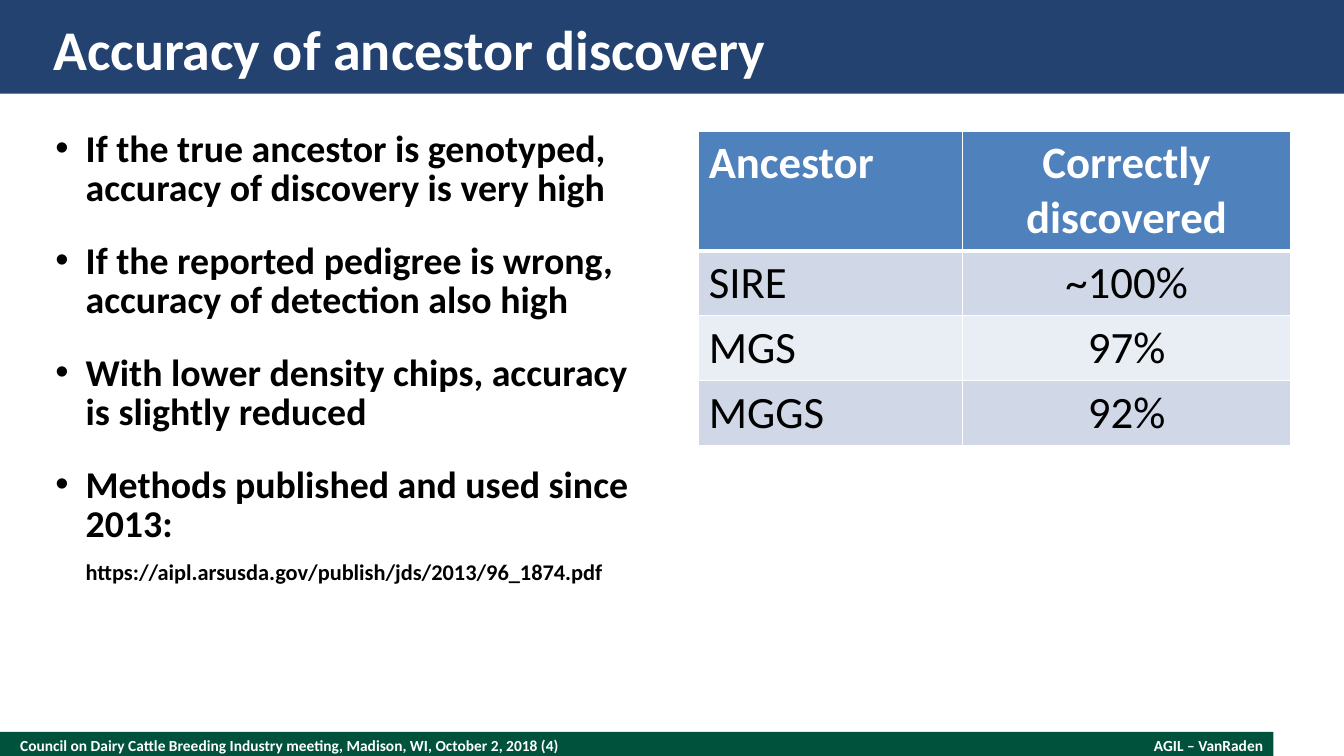
from lxml.etree import SubElement
from pptx import Presentation
from pptx.dml.color import RGBColor
from pptx.enum.shapes import MSO_SHAPE
from pptx.enum.text import MSO_ANCHOR as ANCHOR, MSO_AUTO_SIZE as AUTOSIZE, PP_ALIGN as ALIGN
from pptx.oxml import parse_xml
from pptx.oxml.ns import nsdecls, qn
from pptx.util import Inches, Pt

COLORS = {
    "navy": "244270", "green": "00523C", "white": "FFFFFF", "black": "000000",
    "header": "4F81BD", "band": "D0D8E8", "light band": "E9EDF4",
}


def color(name):
    return RGBColor.from_string(COLORS[name])


def write(paragraph, text, size, ink="white", bold=True, align=ALIGN.LEFT):
    """Append a formatted run to a paragraph."""
    paragraph.alignment = align
    run = paragraph.add_run()
    run.text = text
    run.font.name = "Calibri"
    run.font.size = Pt(size)
    run.font.bold = bold
    run.font.color.rgb = color(ink)


prs = Presentation()
prs.slide_width, prs.slide_height = Inches(13.33), Inches(7.5)
slide = prs.slides.add_slide(prs.slide_layouts[1])
title, body = slide.placeholders

# Bands behind the title and the footer
for top, width, height, fill in [(7.26, 12.63, 0.27, "green"), (0, 13.33, 0.93, "navy")]:
    band = slide.shapes.add_shape(
        MSO_SHAPE.RECTANGLE, 0, Inches(top), Inches(width), Inches(height))
    band.shadow.inherit = False
    band.fill.solid()
    band.fill.fore_color.rgb = color(fill)
    band.line.fill.background()
    title.element.addprevious(band.element)

# Footer, title and body frames
meeting = slide.shapes.add_textbox(0, 0, 0, 0)
author = slide.shapes.add_textbox(0, 0, 0, 0)
for frame, bounds, anchor in [
    (meeting, (0.2, 7.26, 8.67, 0.27), ANCHOR.MIDDLE),
    (author, (9.6, 7.3, 2.93, 0.19), ANCHOR.MIDDLE),
    (title, (0.53, 0.13, 12.27, 0.7), ANCHOR.MIDDLE),
    (body, (0.55, 1.3, 5.87, 5.6), ANCHOR.TOP),
]:
    frame.left, frame.top, frame.width, frame.height = map(Inches, bounds)
    text = frame.text_frame
    text.margin_left = text.margin_top = text.margin_right = text.margin_bottom = 0
    text.word_wrap = True
    text.auto_size = AUTOSIZE.NONE
    text.vertical_anchor = anchor

write(meeting.text_frame.paragraphs[0],
      "Council on Dairy Cattle Breeding Industry meeting, Madison, WI, October 2, 2018 (4)",
      size=11)
write(author.text_frame.paragraphs[0], "AGIL – VanRaden", size=11, align=ALIGN.RIGHT)
write(title.text_frame.paragraphs[0], "Accuracy of ancestor discovery", size=40)

# Findings
findings = [
    "If the true ancestor is genotyped, accuracy of discovery is very high",
    "If the reported pedigree is wrong, accuracy of detection also high",
    "With lower density chips, accuracy is slightly reduced",
    "Methods published and used since 2013: ",
]
for i, finding in enumerate(findings):
    point = body.text_frame.add_paragraph() if i else body.text_frame.paragraphs[0]
    props = point._p.get_or_add_pPr()
    props.set("marL", str(Inches(0.3)))
    props.set("indent", str(-Inches(0.3)))
    SubElement(props, qn("a:buChar")).set("char", "•")
    point.line_spacing = Pt(28)
    point.space_before = Pt(0)
    point.space_after = Pt(24)
    write(point, finding, size=27, ink="black")
write(point, "https://aipl.arsusda.gov/publish/jds/2013/96_1874.pdf", size=16, ink="black")

# Discovery rates
rates = [("Ancestor", "Correctly discovered"),
         ("SIRE", "~100%"), ("MGS", "97%"), ("MGGS", "92%")]
table = slide.shapes.add_table(
    len(rates), 2, Inches(6.93), Inches(1.3), Inches(5.87), Inches(3.07)).table
table.columns[0].width, table.columns[1].width = Inches(2.62), Inches(3.25)
for r, rate in enumerate(rates):
    is_header = r == 0
    table.rows[r].height = Inches(1.17 if is_header else 0.64)
    fill = "header" if is_header else "band" if r % 2 else "light band"
    for c, value in enumerate(rate):
        cell = table.cell(r, c)
        cell.fill.solid()
        cell.fill.fore_color.rgb = color(fill)
        write(cell.text_frame.paragraphs[0], value, size=32, bold=is_header,
              ink="white" if is_header else "black",
              align=ALIGN.CENTER if c else ALIGN.LEFT)
        borders = {"lnL": 1, "lnR": 1, "lnT": 3 if r == 1 else 1, "lnB": 3 if is_header else 1}
        for place, (side, points) in enumerate(borders.items()):
            cell._tc.get_or_add_tcPr().insert(place, parse_xml(
                f'<a:{side} {nsdecls("a")} w="{Pt(points)}"><a:solidFill>'
                f'<a:srgbClr val="{COLORS["white"]}"/></a:solidFill></a:{side}>'))

prs.save("out.pptx")
